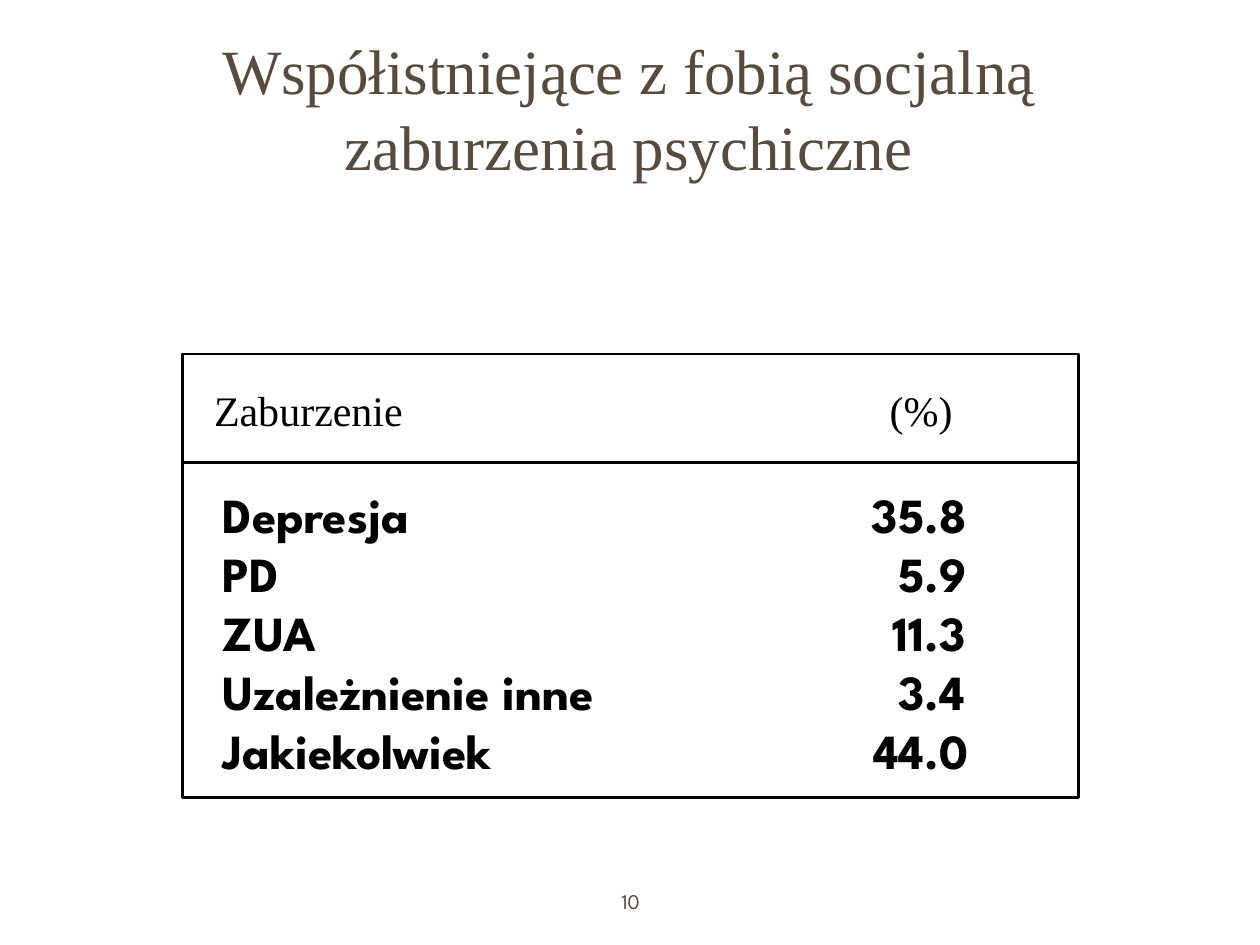
from lxml import etree
from pptx import Presentation, util as u
from pptx.dml.color import RGBColor
from pptx.enum import shapes, text
from pptx.oxml.ns import qn

HUES = {"ink": "000000", "brown": "564B3C", "white": "FFFFFF"}
SERIF, SANS = "Times New Roman", "League Spartan"
COLS, ROWS = 100, 75
DATA = [
    ("Depresja", "35.8"),
    ("PD", "5.9"),
    ("ZUA", "11.3"),
    ("Uzależnienie inne", "3.4"),
    ("Jakiekolwiek", "44.0"),
]

deck = Presentation()
deck.slide_width, deck.slide_height = u.Inches(10), u.Inches(7.5)
COL, ROW = deck.slide_width / COLS, deck.slide_height / ROWS


def place(item, box):
    x, y, w, h = box
    item.left, item.top = round(x * COL), round(y * ROW)
    item.width, item.height = round(w * COL), round(h * ROW)


def frame(item, box, anchor):
    place(item, box)
    body = item.text_frame
    body.word_wrap = True
    body.auto_size = text.MSO_AUTO_SIZE.NONE
    body.vertical_anchor = anchor
    return body


def write(para, words, size, face, hue, bold=False):
    run = para.add_run()
    run.text = words
    font = run.font
    font.size, font.name, font.bold = u.Pt(size), face, bold
    font.color.rgb = RGBColor.from_string(HUES[hue])


def set_tab(para, col, kind):
    props = para._p.get_or_add_pPr()
    tabs = etree.SubElement(props, qn("a:tabLst"))
    etree.SubElement(tabs, qn("a:tab"), pos=str(round(col * COL)), algn=kind)


def add_sheet(slide, box):
    sheet = slide.shapes.add_shape(
        shapes.MSO_SHAPE.ROUNDED_RECTANGLE, 0, 0, 0, 0)
    place(sheet, box)
    sheet.adjustments[0] = 0.02
    sheet.shadow.inherit = False
    sheet.fill.solid()
    sheet.fill.fore_color.rgb = RGBColor.from_string(HUES["white"])
    sheet.line.fill.background()
    slide.shapes._spTree.insert(2, sheet._element)


def add_title(slide, box):
    body = frame(slide.shapes.title, box, text.MSO_ANCHOR.BOTTOM)
    para = body.paragraphs[0]
    para.alignment = text.PP_ALIGN.CENTER
    write(para, "Współistniejące z fobią socjalną zaburzenia psychiczne",
          36, SERIF, "brown")


def add_head(slide, box):
    label = slide.shapes.add_textbox(0, 0, 0, 0)
    para = frame(label, box, text.MSO_ANCHOR.TOP).paragraphs[0]
    para.space_before = u.Pt(4.8)
    set_tab(para, 55.7, "ctr")
    write(para, "Zaburzenie \t (%)", 24, SERIF, "ink")


def add_list(slide, box):
    label = slide.shapes.add_textbox(0, 0, 0, 0)
    body = frame(label, box, text.MSO_ANCHOR.TOP)
    for i, pair in enumerate(DATA):
        para = body.add_paragraph() if i else body.paragraphs[0]
        set_tab(para, 55.7, "dec")
        write(para, "\t".join(pair), 28, SANS, "ink", True)


def add_grid(slide, box, head):
    x, y, w, h = box
    edge = slide.shapes.add_shape(shapes.MSO_SHAPE.RECTANGLE, 0, 0, 0, 0)
    place(edge, box)
    edge.shadow.inherit = False
    edge.fill.background()
    level = round((y + head) * ROW)
    rule = slide.shapes.add_connector(
        shapes.MSO_CONNECTOR.STRAIGHT,
        round(x * COL), level, round((x + w) * COL), level)
    etree.SubElement(rule._element.spPr, qn("a:effectLst"))
    for part in (edge, rule):
        part.line.color.rgb = RGBColor.from_string(HUES["ink"])
        part.line.width = u.Pt(1.5)


def add_panel(slide, box):
    x, y, w, h = box
    head = 8.6
    add_head(slide, (x + 1.5, y + 1.9, w + 2.8, head))
    add_list(slide, (x + 2.2, y + 9.9, w + 2.7, 24.4))
    add_grid(slide, box, head)


def add_page(slide, box):
    label = slide.shapes.add_textbox(0, 0, 0, 0)
    para = frame(label, box, text.MSO_ANCHOR.MIDDLE).paragraphs[0]
    para.alignment = text.PP_ALIGN.CENTER
    write(para, "10", 12, SANS, "brown")


def main():
    slide = deck.slides.add_slide(deck.slide_layouts[5])
    add_sheet(slide, (1, 1.1, 98, 72.9))
    add_title(slide, (7, 2, 85.8, 13))
    add_panel(slide, (14.5, 28.1, 71.1, 35.2))
    add_page(slide, (34.2, 69.5, 31.7, 4))
    deck.save("out.pptx")


if __name__ == "__main__":
    main()
